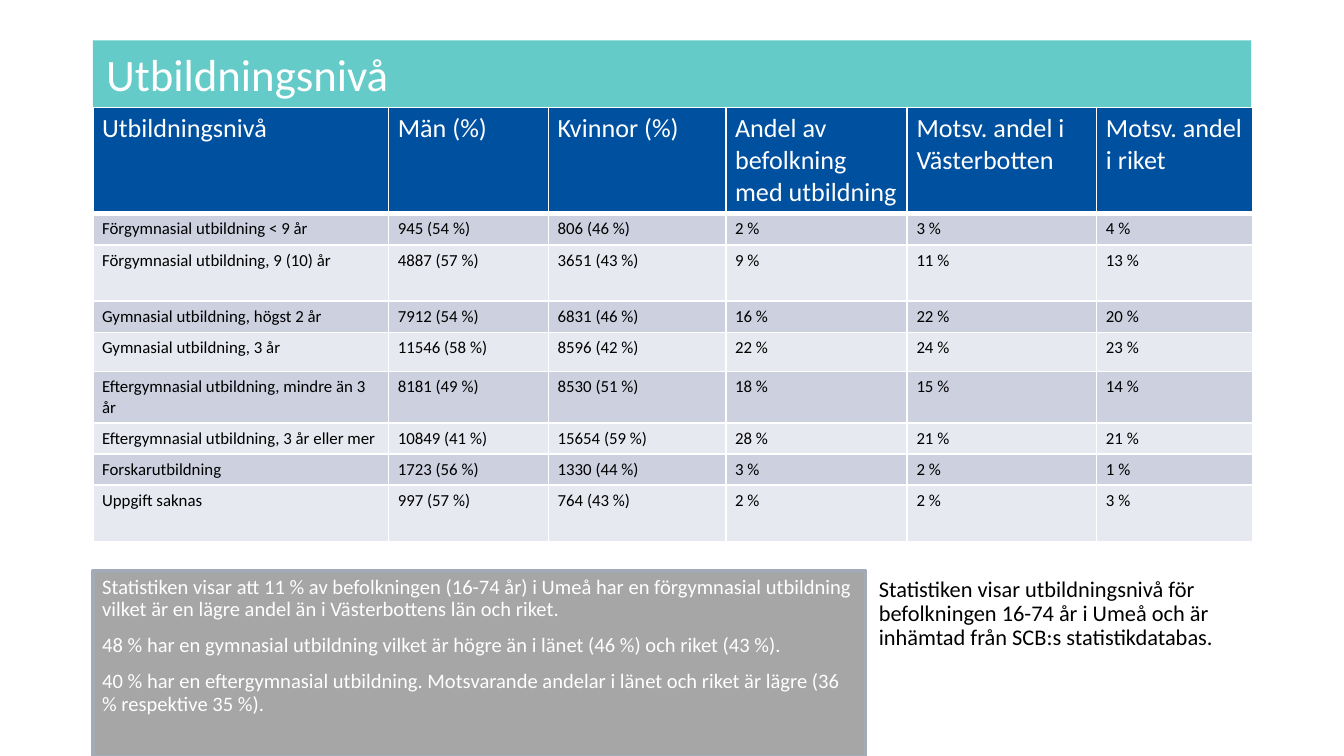
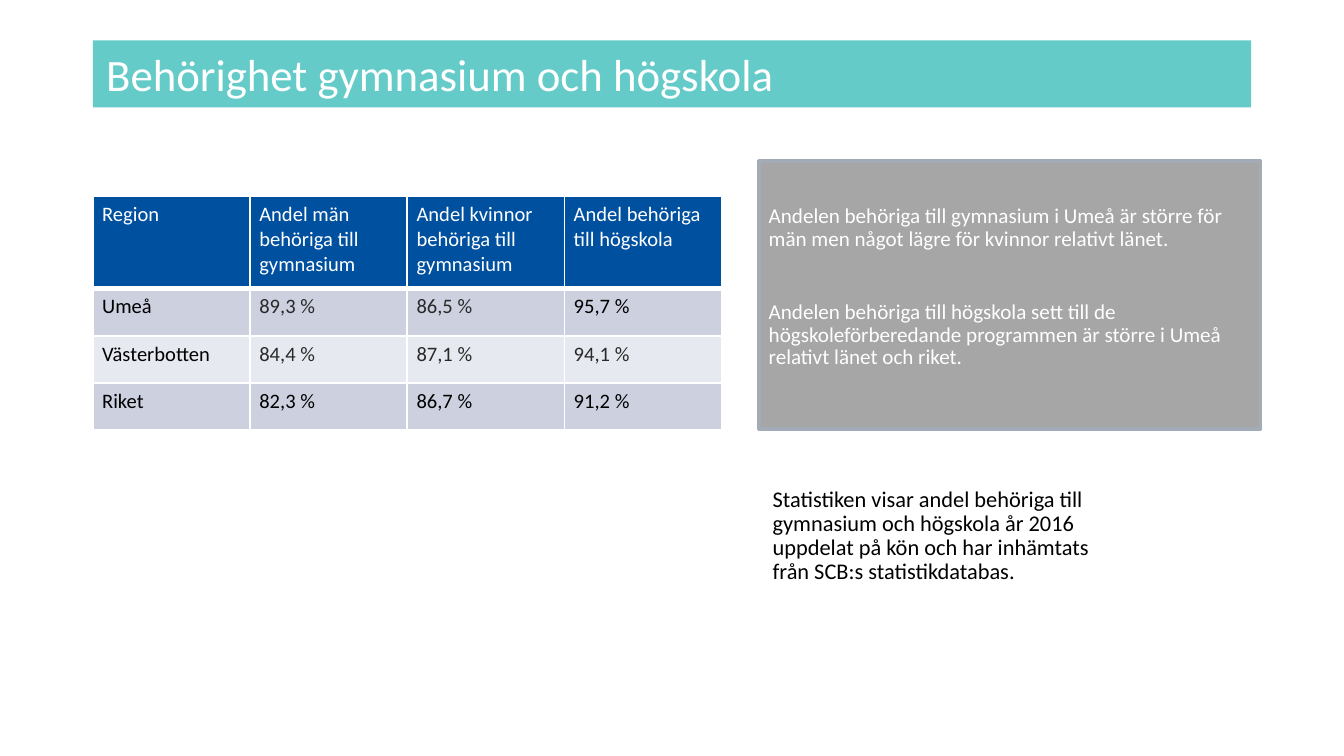
from lxml.etree import SubElement
from pptx import Presentation
from pptx.dml.color import RGBColor
from pptx.enum.shapes import MSO_SHAPE
from pptx.enum.text import MSO_ANCHOR, MSO_AUTO_SIZE, PP_ALIGN
from pptx.oxml.ns import qn
from pptx.util import Inches, Pt

FONT = "Calibri"
COLORS = {
    "title": "64CBC9",
    "header": "0050A0",
    "odd_row": "CCD0DF",
    "even_row": "E7E9F0",
    "box": "A6A6A6",
    "box_line": "A3ABB6",
    "white": "FFFFFF",
    "black": "000000",
    "charcoal": "292929",
}
LEFT = 0.69
TIGHT_INSETS = (0.07, 0.04, 0.07, 0.04)


def rgb(name):
    return RGBColor.from_string(COLORS[name])


def write_text(frame, *texts, size, color, spacing=None, gap=0):
    """Fill a text frame with one left-aligned paragraph for each text."""
    for index, text in enumerate(texts):
        paragraph = frame.paragraphs[0] if index == 0 else frame.add_paragraph()
        paragraph.text = text
        paragraph.alignment = PP_ALIGN.LEFT
        paragraph.space_before = Pt(gap if index else 0)
        if spacing:
            paragraph.line_spacing = spacing
        font = paragraph.font
        font.name = FONT
        font.size = Pt(size)
        font.bold = False
        font.color.rgb = rgb(color)


def set_border(cell, side, width):
    line = SubElement(cell._tc.get_or_add_tcPr(), qn(f"a:ln{side}"), w=str(Pt(width)))
    fill = SubElement(line, qn("a:solidFill"))
    SubElement(fill, qn("a:srgbClr"), val=COLORS["white"])


class SlideBuilder:
    def __init__(self, presentation):
        self.presentation = presentation
        self.slide = None

    def start(self, title):
        """Add a slide with its title band."""
        self.slide = self.presentation.slides.add_slide(self.presentation.slide_layouts[5])
        band = self.slide.shapes.title
        band.left, band.top = Inches(LEFT), Inches(0.3)
        band.width, band.height = Inches(8.62), Inches(0.5)
        band.fill.solid()
        band.fill.fore_color.rgb = rgb("title")
        frame = band.text_frame
        frame.auto_size = MSO_AUTO_SIZE.NONE
        frame.vertical_anchor = MSO_ANCHOR.MIDDLE
        write_text(frame, title, size=24, color="white")

    def table(self, top, widths, heights, rows, header_size, body_size, charcoal_cells=()):
        shape = self.slide.shapes.add_table(
            len(rows), len(widths), Inches(LEFT), Inches(top),
            Inches(sum(widths)), Inches(sum(heights)))
        table = shape.table
        for column, width in zip(table.columns, widths):
            column.width = Inches(width)
        for row, height in zip(table.rows, heights):
            row.height = Inches(height)
        for row_index, texts in enumerate(rows):
            for column_index, text in enumerate(texts):
                cell = table.cell(row_index, column_index)
                if row_index == 0:
                    fill, color, size = "header", "white", header_size
                else:
                    fill = "odd_row" if row_index % 2 else "even_row"
                    is_charcoal = (row_index, column_index) in charcoal_cells
                    color = "charcoal" if is_charcoal else "black"
                    size = body_size
                self.cell(cell, text, fill, color, size)

    def cell(self, cell, text, fill, color, size):
        (cell.margin_left, cell.margin_top,
         cell.margin_right, cell.margin_bottom) = map(Inches, TIGHT_INSETS)
        write_text(cell.text_frame, text, size=size, color=color)
        # The header row has a thicker bottom line
        bottom = 3 if fill == "header" else 1
        for side, width in (("L", 1), ("R", 1), ("T", 1), ("B", bottom)):
            set_border(cell, side, width)
        cell.fill.solid()
        cell.fill.fore_color.rgb = rgb(fill)

    def summary_box(self, left, top, width, height, *texts, size, gap, inset_top=0.04):
        shape = self.slide.shapes.add_shape(
            MSO_SHAPE.RECTANGLE, Inches(left), Inches(top), Inches(width), Inches(height))
        shape.shadow.inherit = False
        shape.fill.solid()
        shape.fill.fore_color.rgb = rgb("box")
        shape.line.color.rgb = rgb("box_line")
        shape.line.width = Pt(2)
        frame = shape.text_frame
        frame.word_wrap = True
        frame.vertical_anchor = MSO_ANCHOR.TOP
        (frame.margin_left, frame.margin_top,
         frame.margin_right, frame.margin_bottom) = map(Inches, TIGHT_INSETS)
        frame.margin_top = Inches(inset_top)
        write_text(frame, *texts, size=size, color="white", spacing=0.9, gap=gap)

    def source_note(self, left, top, width, height, text):
        box = self.slide.shapes.add_textbox(
            Inches(left), Inches(top), Inches(width), Inches(height))
        box.text_frame.word_wrap = True
        write_text(box.text_frame, text, size=12, color="black", spacing=0.9)


def build_education_level(builder):
    builder.start("Utbildningsnivå")
    builder.table(
        top=0.8,
        widths=[2.2, 1.19, 1.32, 1.35, 1.41, 1.16],
        heights=[0.75, 0.23, 0.42, 0.23, 0.29, 0.38, 0.23, 0.23, 0.42],
        rows=[
            ["Utbildningsnivå", "Män (%)", "Kvinnor (%)", "Andel av befolkning med utbildning",
             "Motsv. andel i Västerbotten", "Motsv. andel i riket"],
            ["Förgymnasial utbildning < 9 år", "945 (54 %)", "806 (46 %)", "2 %", "3 %", "4 %"],
            ["Förgymnasial utbildning, 9 (10) år", "4887 (57 %)", "3651 (43 %)",
             "9 %", "11 %", "13 %"],
            ["Gymnasial utbildning, högst 2 år", "7912 (54 %)", "6831 (46 %)",
             "16 %", "22 %", "20 %"],
            ["Gymnasial utbildning, 3 år", "11546 (58 %)", "8596 (42 %)", "22 %", "24 %", "23 %"],
            ["Eftergymnasial utbildning, mindre än 3 år", "8181 (49 %)", "8530 (51 %)",
             "18 %", "15 %", "14 %"],
            ["Eftergymnasial utbildning, 3 år eller mer", "10849 (41 %)", "15654 (59 %)",
             "28 %", "21 %", "21 %"],
            ["Forskarutbildning", "1723 (56 %)", "1330 (44 %)", "3 %", "2 %", "1 %"],
            ["Uppgift saknas", "997 (57 %)", "764 (43 %)", "2 %", "2 %", "3 %"],
        ],
        header_size=14, body_size=9)
    builder.summary_box(
        LEFT, 4.25, 5.75, 1.38,
        "Statistiken visar att 11 % av befolkningen (16-74 år) i Umeå har en förgymnasial "
        "utbildning vilket är en lägre andel än i Västerbottens län och riket.",
        "48 % har en gymnasial utbildning vilket är högre än i länet (46 %) och riket (43 %).",
        "40 % har en eftergymnasial utbildning. Motsvarande andelar i länet och riket är lägre "
        "(36 % respektive 35 %).",
        size=11, gap=7.5)
    builder.source_note(
        6.44, 4.25, 2.89, 0.69,
        "Statistiken visar utbildningsnivå för befolkningen 16-74 år i Umeå och är inhämtad "
        "från SCB:s statistikdatabas.")


def build_eligibility(builder):
    builder.start("Behörighet gymnasium och högskola")
    builder.table(
        top=1.46,
        widths=[1.17] * 4,
        heights=[0.69] + [0.35] * 3,
        rows=[
            ["Region", "Andel män behöriga till gymnasium",
             "Andel kvinnor behöriga till gymnasium", "Andel behöriga till högskola"],
            ["Umeå", "89,3 %", "86,5 %", "95,7 %"],
            ["Västerbotten", "84,4 %", "87,1 %", "94,1 %"],
            ["Riket", "82,3 %", "86,7 %", "91,2 %"],
        ],
        header_size=11, body_size=11,
        charcoal_cells={(1, 1), (1, 2), (2, 1), (2, 2), (2, 3)})
    builder.source_note(
        5.65, 3.58, 2.58, 0.96,
        "Statistiken visar andel behöriga till gymnasium och högskola år 2016 uppdelat på kön "
        "och har inhämtats från SCB:s statistikdatabas.")
    builder.summary_box(
        5.65, 1.2, 3.73, 1.99,
        "Andelen behöriga till gymnasium i Umeå är större för män men något lägre för kvinnor "
        "relativt länet.",
        "Andelen behöriga till högskola sett till de högskoleförberedande programmen är större "
        "i Umeå relativt länet och riket.",
        size=11.25, gap=27, inset_top=0.33)


def main():
    presentation = Presentation()
    # Widescreen, 16:9
    presentation.slide_width = Inches(10)
    presentation.slide_height = presentation.slide_width * 9 // 16
    builder = SlideBuilder(presentation)
    build_education_level(builder)
    build_eligibility(builder)
    presentation.save("out.pptx")


if __name__ == "__main__":
    main()
